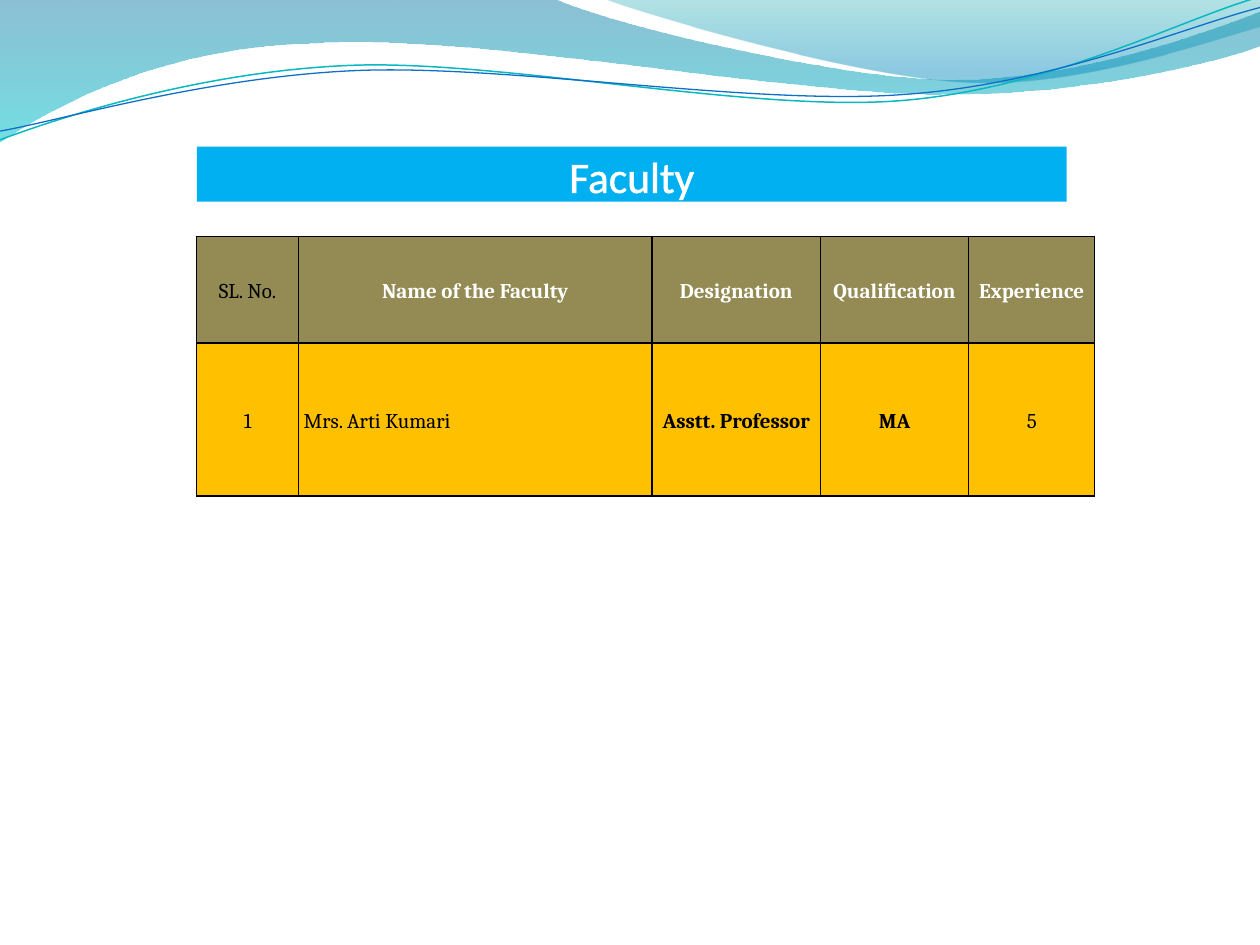
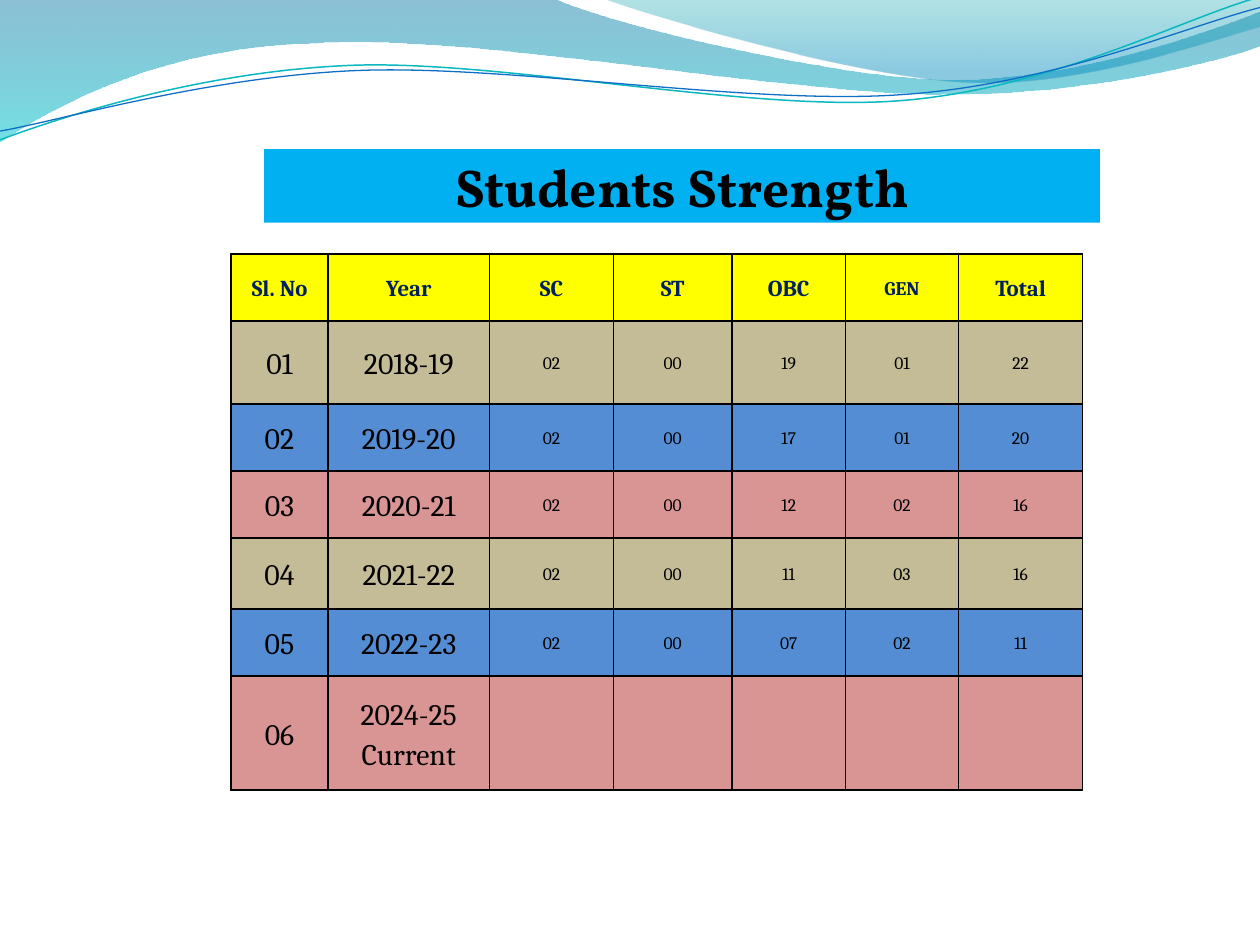
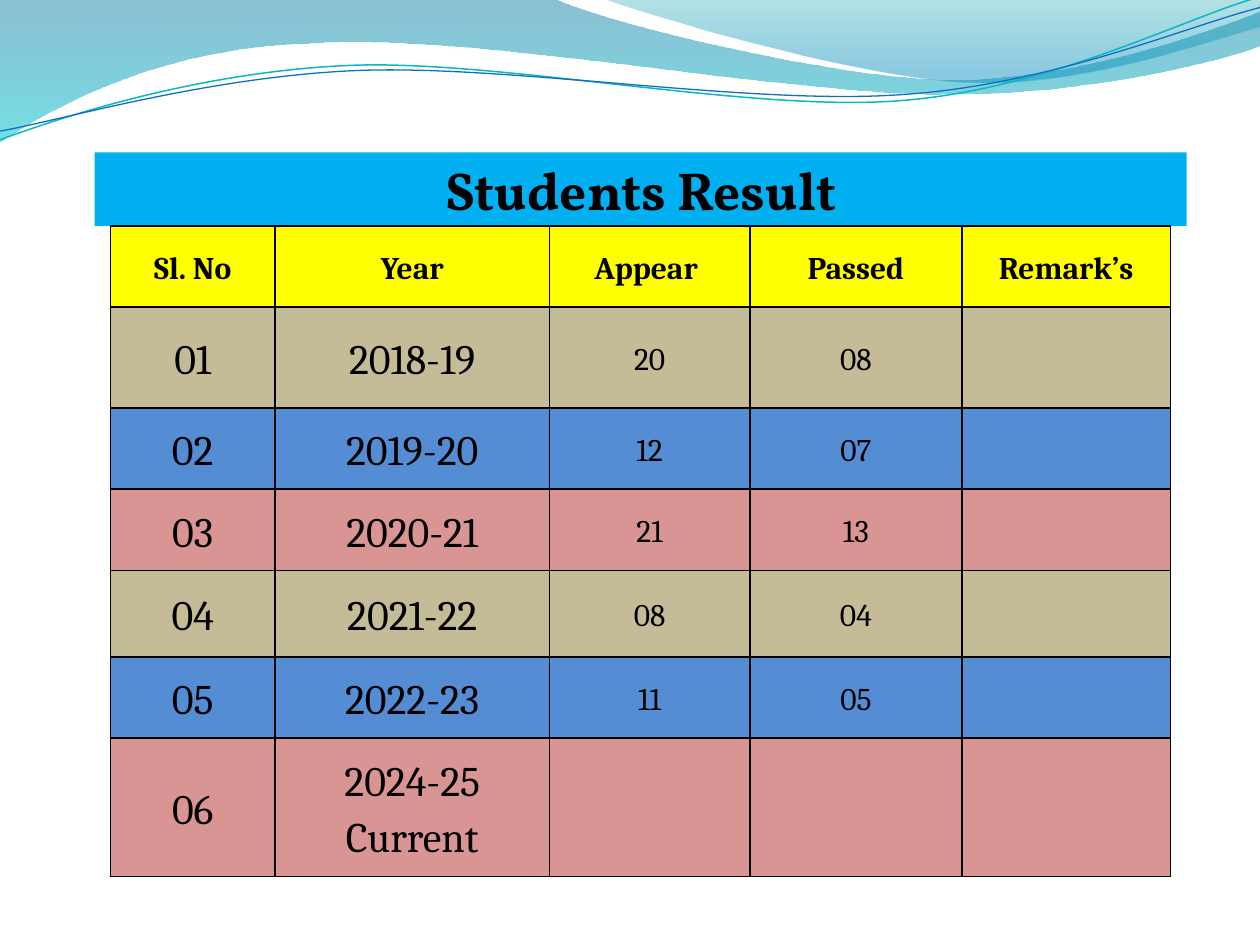
import math
from dataclasses import dataclass

from lxml import etree
from pptx import Presentation
from pptx import util as u
from pptx.dml.color import RGBColor
from pptx.enum import text
from pptx.oxml.ns import qn


@dataclass(frozen=True)
class Theme:
    white: str = "FFFFFF"
    black: str = "000000"
    navy: str = "002060"
    band: str = "00B0F0"
    olive: str = "948A54"
    amber: str = "FFC000"
    yellow: str = "FFFF00"
    stripes: tuple = ("C4BC96", "548DD4", "D99594")
    wave: tuple = ((0, "0074A1", 45), (1, "00C6CF", 55))
    crest: tuple = ((0, "00A1A9", 30), (0.8, "008BBF", 45))
    teal_line: str = "0AB8BF"
    blue_line: str = "0F6FC6"
    plain_font: str = "Calibri"
    title_font: str = "Vollkorn"
    table_font: str = "Cambria"
    plain_title: float = 24.9
    big_title: float = 30.5
    spacing: float = 1.15
    border: float = 1


@dataclass(frozen=True)
class CellStyle:
    size: float
    color: str = "000000"
    bold: bool = False
    align: int = text.PP_ALIGN.CENTER


T = Theme()
TILT = -2.7
CURVE_CENTRE = (359.3, 41.4)
WAVE = [(0, 0), (316.8, -0.7), (342.7, 12.2, 478, 45.4, 545.8, 45.4),
        (614.2, 45.4, 689.8, 18.7, 720, 6.5), (720.7, 25.9),
        (707.8, 31.7, 626.4, 54.7, 537.1, 54), (447.8, 54, 275, 20.2, 185, 24.5),
        (92.9, 25.9, 33.1, 59.8, -0.7, 81.4), (0, 0)]
CREST = [(344.9, -0.7), (366.5, 7.9, 491, 44.6, 553.7, 46.8),
         (616.3, 49.7, 691.9, 23, 720, 15.1), (720, 0), (344.9, -0.7)]
TEAL_CURVE = [(0, 79.9), (34.6, 67, 113.8, 41, 199.4, 37.4),
              (284.4, 33.8, 427, 64.1, 513.4, 57.6),
              (599.8, 51.1, 675.4, 10.8, 718.6, -1.4)]
BLUE_CURVE = [(0, 74.9), (33.8, 69.1, 118.1, 43.9, 203.8, 40.3),
              (290.2, 36.7, 429.8, 60.5, 516.2, 54),
              (601.9, 48.2, 677.5, 15.1, 720, 4.3)]

SESSIONS = ["2018-19", "2019-20", "2020-21", "2021-22", "2022-23", "2024-25 Current"]
SESSION_ROWS = [38.3, 47.4, 38.3, 38.3, 40.6, 38.3, 65.1]
STRENGTH = [["02", "00", "19", "01", "22"], ["02", "00", "17", "01", "20"],
            ["02", "00", "12", "02", "16"], ["02", "00", "11", "03", "16"],
            ["02", "00", "07", "02", "11"], [""] * 5]
RESULT = [["20", "08", ""], ["12", "07", ""], ["21", "13", ""],
          ["08", "04", ""], ["11", "05", ""], [""] * 3]


def rgb(code):
    return RGBColor.from_string(code)


def turn(point, degrees):
    cx, cy = CURVE_CENTRE
    x, y = point[0] - cx, point[1] - cy
    a = math.radians(degrees)
    return (cx + x * math.cos(a) - y * math.sin(a), cy + x * math.sin(a) + y * math.cos(a))


def add_outline(s, segments, close, tilt=0):
    points = [turn(seg[i:i + 2], -tilt) for seg in segments for i in range(0, len(seg), 2)]
    points = [(u.Pt(x), u.Pt(y)) for x, y in points]
    builder = s.shapes.build_freeform(*points[0])
    builder.add_line_segments(points[1:], close=close)
    sp = builder.convert_to_shape()
    bend(sp, segments)
    sp.rotation = tilt
    sp.shadow.inherit = False
    return sp


def bend(sp, segments):
    lines = sp.element.iter(qn("a:lnTo"))
    steps = [[next(lines) for _ in range(len(seg) // 2)] for seg in list(segments)[1:]]
    for step in steps:
        if len(step) == 3:
            curve = etree.Element(qn("a:cubicBezTo"))
            step[0].addprevious(curve)
            for line in step:
                curve.append(line[0])
                line.getparent().remove(line)


def add_wave(s, segments, stops):
    sp = add_outline(s, segments, True)
    sp.line.fill.background()
    sp.fill.gradient()
    sp.fill.gradient_angle = 270
    for stop, (position, color, _) in zip(sp.fill.gradient_stops, stops):
        stop.position = position
        stop.color.rgb = rgb(color)
    for node, (_, _, opacity) in zip(sp.element.iter(qn("a:gs")), stops):
        etree.SubElement(node[0], qn("a:alpha"), val=str(opacity * 1000))
    return sp


def add_curve(s, segments, color, width):
    sp = add_outline(s, segments, False, TILT)
    sp.fill.background()
    sp.line.color.rgb = rgb(color)
    sp.line.width = u.Pt(width)
    return sp


def decorate_master(master, s):
    curves = [add_curve(s, TEAL_CURVE, T.teal_line, 0.85),
              add_curve(s, BLUE_CURVE, T.blue_line, 0.75)]
    parts = [add_wave(s, WAVE, T.wave), add_wave(s, CREST, T.crest),
             s.shapes.add_group_shape(curves)]
    for i, sp in enumerate(parts):
        master.shapes.element.insert(2 + i, sp.element)


def add_run(p, content, size, font, color, bold):
    r = p.add_run()
    r.text = content
    r.font.size = u.Pt(size)
    r.font.name = font
    r.font.bold = bold
    r.font.color.rgb = rgb(color)
    return r


def place_title(s, box, content, size, font, color, bold, anchor, insets):
    sp = s.shapes.title
    sp.left, sp.top, sp.width, sp.height = map(u.Pt, box)
    sp.fill.solid()
    sp.fill.fore_color.rgb = rgb(T.band)
    tf = sp.text_frame
    tf.word_wrap = True
    tf.auto_size = text.MSO_AUTO_SIZE.NONE
    tf.vertical_anchor = anchor
    tf.margin_left, tf.margin_top, tf.margin_right, tf.margin_bottom = map(u.Pt, insets)
    p = tf.paragraphs[0]
    p.alignment = text.PP_ALIGN.CENTER
    return add_run(p, content, size, font, color, bold)


def plain_title(s, box, content):
    r = place_title(s, box, content, T.plain_title, T.plain_font, T.white, False,
                    text.MSO_ANCHOR.BOTTOM, (0, 3.6, 0, 0))
    ln = etree.Element(qn("a:ln"), w=str(u.Pt(1.45)))
    fill = etree.SubElement(ln, qn("a:solidFill"))
    etree.SubElement(fill, qn("a:srgbClr"), val=T.white)
    r.font._element.insert(0, ln)


def big_title(s, box, content):
    place_title(s, box, content, T.big_title, T.title_font, T.black, True,
                text.MSO_ANCHOR.MIDDLE, (5, 2, 5, 2))


def border_cell(cell):
    tcPr = cell._tc.get_or_add_tcPr()
    for i, side in enumerate(("lnL", "lnR", "lnT", "lnB")):
        ln = etree.Element(qn("a:" + side), w=str(u.Pt(T.border)))
        fill = etree.SubElement(ln, qn("a:solidFill"))
        etree.SubElement(fill, qn("a:srgbClr"), val=T.black)
        tcPr.insert(i, ln)


def fill_cell(cell, content, color, style, inset):
    cell.fill.solid()
    cell.fill.fore_color.rgb = rgb(color)
    border_cell(cell)
    cell.vertical_anchor = text.MSO_ANCHOR.MIDDLE
    cell.margin_left = cell.margin_right = u.Pt(inset)
    cell.margin_top = cell.margin_bottom = 0
    if content:
        p = cell.text_frame.paragraphs[0]
        p.alignment = style.align
        p.line_spacing = T.spacing
        add_run(p, content, style.size, T.table_font, style.color, style.bold)


def add_grid(s, box, columns, heights, data, fills, style_of, inset):
    left, top, width, height = box
    frame = s.shapes.add_table(len(data), len(columns), *map(u.Pt, box))
    table = frame.table
    table.first_row = table.horz_banding = False
    for column, share in zip(table.columns, columns):
        column.width = u.Pt(width * share / sum(columns))
    for row, share in zip(table.rows, heights):
        row.height = u.Pt(height * share / sum(heights))
    for i, values in enumerate(data):
        for j, content in enumerate(values):
            fill_cell(table.cell(i, j), content, fills[i], style_of(i, j), inset)


def faculty_table(s, box):
    def style_of(i, j):
        if i == 0:
            return CellStyle(12, T.white, True) if j else CellStyle(12)
        if j == 1:
            return CellStyle(12, align=text.PP_ALIGN.LEFT)
        return CellStyle(12, bold=j in (2, 3))

    data = [["SL. No.", "Name of the Faculty", "Designation", "Qualification", "Experience"],
            ["1", "Mrs. Arti Kumari", "Asstt. Professor", "MA", "5"]]
    add_grid(s, box, [58.2, 202.1, 96.2, 84.7, 72], [61, 87.3], data,
             [T.olive, T.amber], style_of, 3)


def session_table(s, box, columns, headings, values, head_of, label_size, value_size, inset):
    def style_of(i, j):
        if i == 0:
            return head_of(headings[j])
        return CellStyle(label_size if j < 2 else value_size)

    data = [headings] + [[f"{n:02}", session, *row]
                         for n, (session, row) in enumerate(zip(SESSIONS, values), 1)]
    add_grid(s, box, columns, SESSION_ROWS, data, [T.yellow, *T.stripes * 2], style_of, inset)


def faculty_slide(s):
    plain_title(s, (112.5, 83.8, 497, 31.5), "Faculty")
    faculty_table(s, (112.4, 135.1, 513.2, 148.3))


def strength_slide(s):
    big_title(s, (150.9, 85.2, 477.6, 42), "Students Strength")
    session_table(s, (132, 145.2, 486.7, 306.3), [55.4, 92.2, 70.8, 67.7, 64.8, 64.6, 70.8],
                  ["Sl. No", "Year", "SC", "ST", "OBC", "GEN", "Total"], STRENGTH,
                  lambda name: CellStyle(11 if name == "GEN" else 13, T.navy, True), 17, 10, 3)


def result_slide(s):
    big_title(s, (54.1, 87.1, 624, 42), "Students Result")
    session_table(s, (63, 129, 605.8, 372), [94.3, 156.7, 114.7, 121.2, 119.2],
                  ["Sl. No", "Year", "Appear ", "Passed", "Remark’s"], RESULT,
                  lambda name: CellStyle(18, bold=True), 24, 18, 4.3)


def main():
    prs = Presentation()
    prs.slide_width, prs.slide_height = u.Pt(720), u.Pt(540)
    layout = prs.slide_layouts.get_by_name("Title Only")
    for i, build in enumerate((faculty_slide, strength_slide, result_slide)):
        s = prs.slides.add_slide(layout)
        if i == 0:
            decorate_master(prs.slide_master, s)
        build(s)
    prs.save("out.pptx")


if __name__ == "__main__":
    main()
